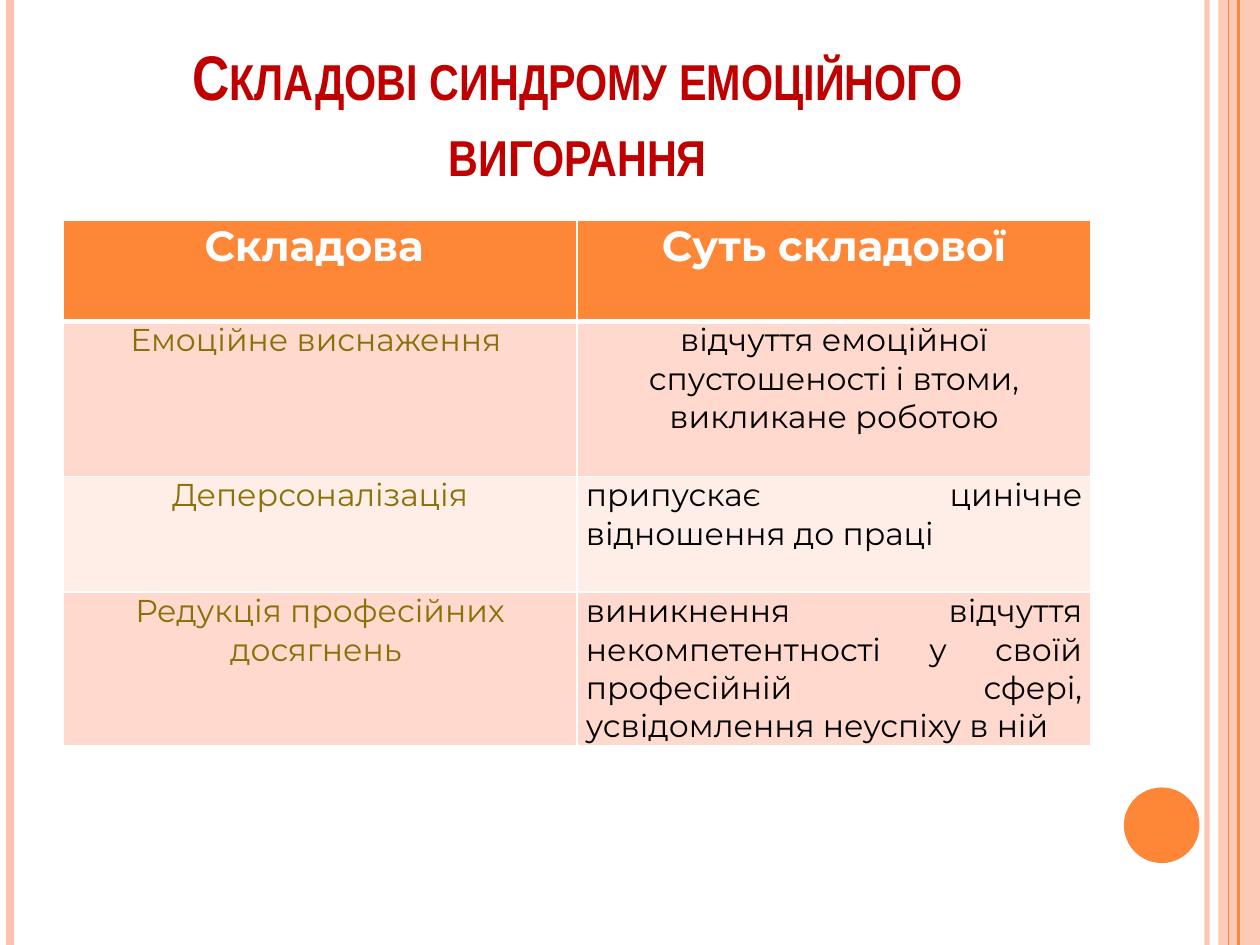
"""Build a slide with a table of the components of emotional burnout."""
from lxml.etree import SubElement
from pptx import Presentation
from pptx.dml.color import RGBColor
from pptx.enum.shapes import MSO_CONNECTOR, MSO_SHAPE
from pptx.enum.text import MSO_ANCHOR, MSO_AUTO_SIZE, PP_ALIGN
from pptx.oxml.ns import qn
from pptx.util import Inches, Pt


def paint(fill, color, opacity=100):
    fill.solid()
    fill.fore_color.rgb = RGBColor.from_string(color)
    if opacity < 100:
        color_node = fill._xPr.find(qn("a:solidFill"))[0]
        SubElement(color_node, qn("a:alpha"), val=str(opacity * 1000))


def style_text(paragraph, font_name, size, color, bold, align):
    paragraph.alignment = align
    for span in paragraph.runs:
        span.font.name = font_name
        span.font.size = Pt(size)
        span.font.bold = bold
        paint(span.font.fill, color)


ORANGE, PEACH, WHITE = "FE8637", "FEC3AE", "FFFFFF"
CENTER, JUSTIFY = PP_ALIGN.CENTER, PP_ALIGN.JUSTIFY

deck = Presentation()
deck.slide_width, deck.slide_height = Inches(10), Inches(7.5)
page = deck.slides.add_slide(deck.slide_layouts[5])
paint(page.background.fill, WHITE)

band = page.shapes.add_shape(MSO_SHAPE.RECTANGLE, Inches(9.67), 0, Inches(0.33), Inches(7.5))
dot = page.shapes.add_shape(MSO_SHAPE.OVAL, Inches(8.92), Inches(6.25), Inches(0.6), Inches(0.6))
for shape, color, opacity in ((band, PEACH, 87), (dot, ORANGE, 100)):
    shape.shadow.inherit = False
    paint(shape.fill, color, opacity)
    shape.line.fill.background()

stripes = (
    (9.58, PEACH, 3, 93),
    (0.08, PEACH, 4.5, 100),
    (9.83, ORANGE, 1.5, 100),
    (9.75, ORANGE, 0.75, 100),
)
for x, color, width, opacity in stripes:
    stripe = page.shapes.add_connector(
        MSO_CONNECTOR.STRAIGHT, Inches(x), 0, Inches(x), Inches(7.5))
    stripe.line.width = Pt(width)
    paint(stripe.line.fill, color, opacity)
    SubElement(stripe._element.spPr, qn("a:effectLst"))

title = page.shapes.title
title.left, title.top = Inches(0.5), Inches(0.3)
title.width, title.height = Inches(8.17), Inches(1.25)
frame = title.text_frame
frame.text = "Складові синдрому емоційного вигорання"
frame.word_wrap = True
frame.auto_size = MSO_AUTO_SIZE.NONE
frame.vertical_anchor = MSO_ANCHOR.BOTTOM
style_text(frame.paragraphs[0], "Arial Narrow", 36, "C00000", True, CENTER)
frame.paragraphs[0].runs[0].font._element.set("cap", "small")

rows = (
    ("Складова ", "Суть складової", 0.8, ORANGE, CENTER),
    ("Емоційне виснаження ",
     "відчуття емоційної спустошеності і втоми, викликане роботою",
     1.23, "FFD9CE", CENTER),
    ("Деперсоналізація", "припускає цинічне відношення до праці",
     0.92, "FFEDE8", JUSTIFY),
    ("Редукція професійних досягнень ",
     "виникнення відчуття некомпетентності у своїй професійній сфері, "
     "усвідомлення неуспіху в ній",
     1.21, "FFD9CE", JUSTIFY),
)
table = page.shapes.add_table(
    len(rows), 2, Inches(0.5), Inches(1.75), Inches(8.16), Inches(4.16)).table
for column in table.columns:
    column.width = Inches(4.08)

for row_index, (component, essence, height, background, essence_align) in enumerate(rows):
    table.rows[row_index].height = Inches(height)
    is_header = row_index == 0
    entries = (
        (component, WHITE if is_header else "8A7007", CENTER),
        (essence, WHITE if is_header else "000000", essence_align),
    )
    for column_index, (text, color, align) in enumerate(entries):
        cell = table.cell(row_index, column_index)
        cell.margin_left = cell.margin_right = Inches(0.07)
        cell.margin_top = cell.margin_bottom = 0
        cell.text_frame.text = text
        style_text(cell.text_frame.paragraphs[0], "Montserrat",
                   24 if is_header else 18, color, is_header, align)
        properties = cell._tc.get_or_add_tcPr()
        for side in "LRTB":
            thick = (row_index, side) in ((0, "B"), (1, "T"))
            border = SubElement(properties, qn(f"a:ln{side}"), w=str(Pt(3 if thick else 1)))
            SubElement(SubElement(border, qn("a:solidFill")), qn("a:srgbClr"), val=WHITE)
        paint(cell.fill, background)

deck.save("out.pptx")
